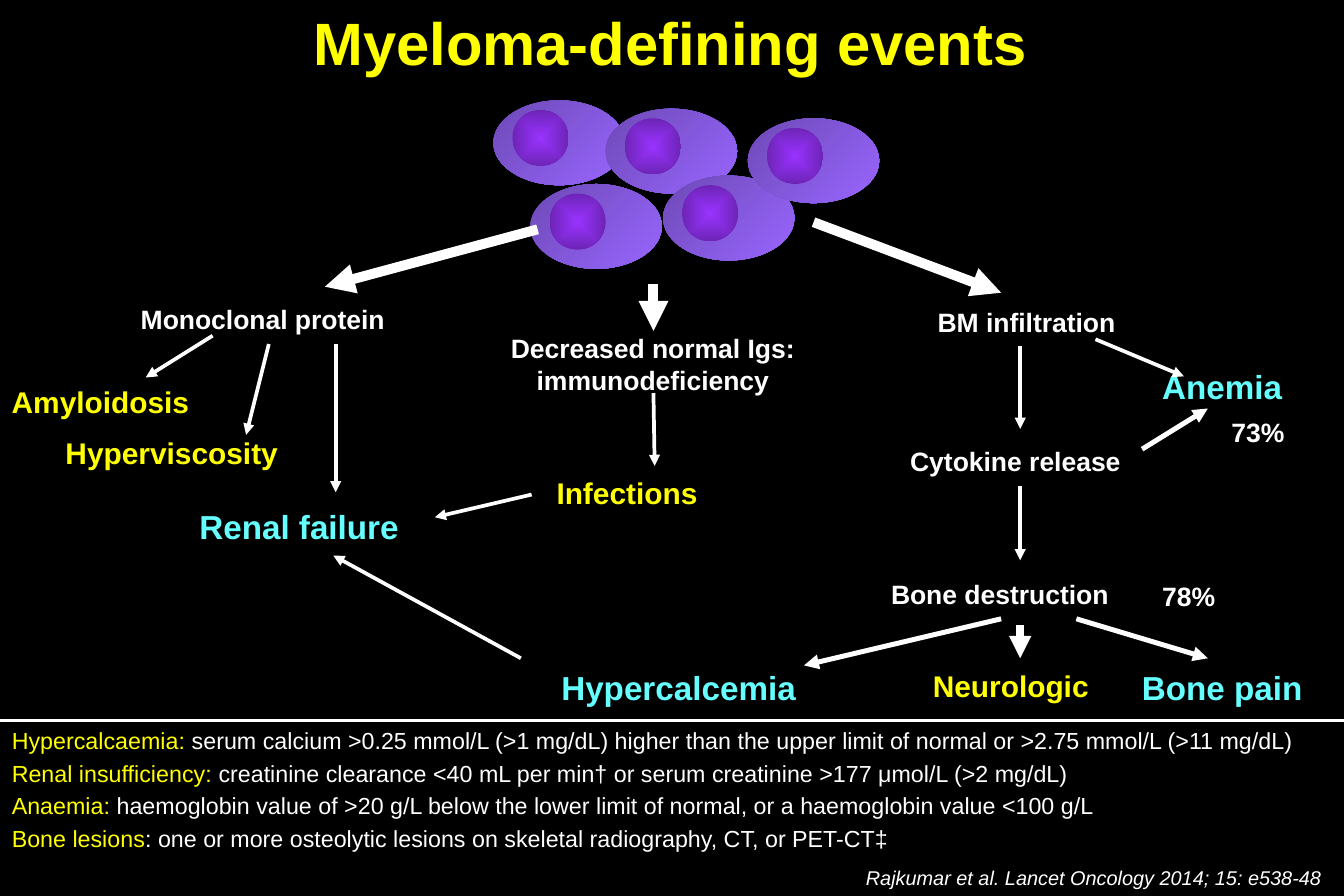
from dataclasses import dataclass

from lxml.etree import SubElement
from pptx import Presentation
from pptx.dml.color import RGBColor as RGB
from pptx.enum.shapes import MSO_CONNECTOR as CONNECTOR, MSO_SHAPE as SHAPE
from pptx.enum.text import MSO_ANCHOR as ANCHOR, MSO_AUTO_SIZE as FIT, PP_ALIGN as ALIGN
from pptx.oxml.ns import qn
from pptx.util import Pt

PX = 9144  # 100 px to the inch


@dataclass(frozen=True)
class Theme:
    font: str = "Arial"
    black: RGB = RGB(0, 0, 0)
    white: RGB = RGB(255, 255, 255)
    yellow: RGB = RGB(255, 255, 0)
    cyan: RGB = RGB(0x66, 0xFF, 0xFF)
    cell: tuple = (RGB(0x6D, 0x49, 0xB6), RGB(0x99, 0x66, 0xFF))
    nucleus: tuple = (RGB(0x99, 0x33, 0xFF), RGB(0x6D, 0x24, 0xB6))
    title: int = 36
    event: int = 20
    effect: int = 18
    cause: int = 16
    criteria: int = 14
    citation: int = 12


theme = Theme()
deck = Presentation()
deck.slide_width, deck.slide_height = 1125 * PX, 750 * PX
page = deck.slides.add_slide(deck.slide_layouts[5])
page.background.fill.solid()
page.background.fill.fore_color.rgb = theme.black


def add_label(text, box, size, color, wrap=False):
    frame = page.shapes.add_textbox(*(n * PX for n in box)).text_frame
    frame.word_wrap = wrap
    frame.auto_size = FIT.SHAPE_TO_FIT_TEXT
    para = frame.paragraphs[0]
    para.text = text
    para.font.name, para.font.size, para.font.bold = theme.font, Pt(size), True
    para.font.color.rgb = color
    return para


def add_line(ends, weight, arrow=True):
    line = page.shapes.add_connector(CONNECTOR.STRAIGHT, *(n * PX for n in ends))
    line.line.color.rgb = theme.white
    line.line.width = Pt(weight)
    if arrow:
        SubElement(line.line._get_or_add_ln(), qn("a:tailEnd"), type="triangle")
    SubElement(line._element.spPr, qn("a:effectLst"))


# Title
title = page.shapes.title
title.left, title.top, title.width, title.height = 11 * PX, 0, 1100 * PX, 70 * PX
title.text_frame.auto_size = FIT.NONE
title.text_frame.vertical_anchor = ANCHOR.MIDDLE
para = title.text_frame.paragraphs[0]
para.text = "Myeloma-defining events"
para.alignment = ALIGN.CENTER
para.font.name, para.font.size, para.font.bold = theme.font, Pt(theme.title), True
para.font.color.rgb = theme.yellow

# Plasma cells: body and nucleus
for left, top in [(413, 84), (444, 154), (507, 91), (555, 147), (626, 99)]:
    for box, colors in [
        ((left, top, 110, 71), theme.cell),
        ((left + 16, top + 8, 47, 47), theme.nucleus),
    ]:
        oval = page.shapes.add_shape(SHAPE.OVAL, *(n * PX for n in box))
        oval.shadow.inherit = False
        oval.line.fill.background()
        oval.fill.gradient()
        oval.fill.gradient_angle = 315
        for stop, color in zip(oval.fill.gradient_stops, colors):
            stop.color.rgb = color
        if colors == theme.nucleus:
            gradient = oval._element.spPr.find(qn("a:gradFill"))
            gradient.remove(gradient.find(qn("a:lin")))
            center = SubElement(gradient, qn("a:path"), path="shape")
            SubElement(center, qn("a:fillToRect"), l="50000", t="50000", r="50000", b="50000")

# Causes, effects and defining events: text, left, top, width
label_groups = [
    (theme.cause, theme.white, 37, [
        ("Monoclonal protein", 108, 249, 227),
        ("BM infiltration", 775, 251, 171),
        ("Cytokine release", 752, 368, 199),
        ("Bone destruction", 736, 479, 205),
        ("78%", 963, 481, 66),
        ("73%", 1021, 343, 66),
    ]),
    (theme.effect, theme.yellow, 40, [
        ("Amyloidosis", 0, 316, 170),
        ("Hyperviscosity", 45, 359, 203),
        ("Infections", 456, 392, 139),
        ("Neurologic", 771, 554, 152),
    ]),
    (theme.event, theme.cyan, 44, [
        ("Renal failure", 157, 419, 189),
        ("Hypercalcemia", 460, 554, 218),
        ("Bone pain", 946, 554, 156),
    ]),
]
for size, color, height, labels in label_groups:
    for text, left, top, width in labels:
        add_label(text, (left, top, width, height), size, color)

add_label("Anemia", (963, 302, 162, 44), theme.event, theme.cyan, wrap=True)
immunity = add_label("Decreased normal Igs: immunodeficiency", (389, 273, 315, 64),
                     theme.cause, theme.white, wrap=True)
immunity.alignment = ALIGN.CENTER

# Arrows by weight
arrows = {
    2.25: [
        (178, 281, 122, 316), (225, 288, 206, 364), (281, 288, 281, 412),
        (854, 290, 854, 359), (917, 284, 991, 315), (854, 407, 854, 469),
        (445, 414, 364, 433), (436, 551, 279, 465), (547, 329, 548, 390),
    ],
    3: [(956, 376, 1011, 342), (901, 518, 1011, 551), (838, 518, 673, 557)],
    4.5: [(854, 523, 854, 551)],
    6: [(450, 192, 272, 240), (681, 186, 838, 245), (547, 238, 547, 277)],
}
for weight, routes in arrows.items():
    for ends in routes:
        add_line(ends, weight)

# Diagnostic criteria
add_line((0, 603, 1125, 603), 2.25, arrow=False)
criteria = [
    ("Hypercalcaemia: ", "serum calcium >0.25 mmol/L (>1 mg/dL) higher than the upper limit "
     "of normal or >2.75 mmol/L (>11 mg/dL)"),
    ("Renal insufficiency: ", "creatinine clearance <40 mL per min† or serum creatinine "
     ">177 μmol/L (>2 mg/dL)"),
    ("Anaemia: ", "haemoglobin value of >20 g/L below the lower limit of normal, "
     "or a haemoglobin value <100 g/L"),
    ("Bone lesions", ": one or more osteolytic lesions on skeletal radiography, CT, or PET-CT‡"),
]
frame = page.shapes.add_textbox(0, 603 * PX, 1125 * PX, 118 * PX).text_frame
frame.word_wrap = True
for row, (term, definition) in enumerate(criteria):
    para = frame.add_paragraph() if row else frame.paragraphs[0]
    if row:
        para.space_before = Pt(2.8)
    para.font.name, para.font.size = theme.font, Pt(theme.criteria)
    for text, color in [(term, theme.yellow), (definition, theme.white)]:
        span = para.add_run()
        span.text = text
        span.font.color.rgb = color

citation = add_label("Rajkumar et al. Lancet Oncology 2014; 15: e538-48",
                     (715, 720, 410, 30), theme.citation, theme.white)
citation.font.bold, citation.font.italic = False, True

deck.save("out.pptx")
